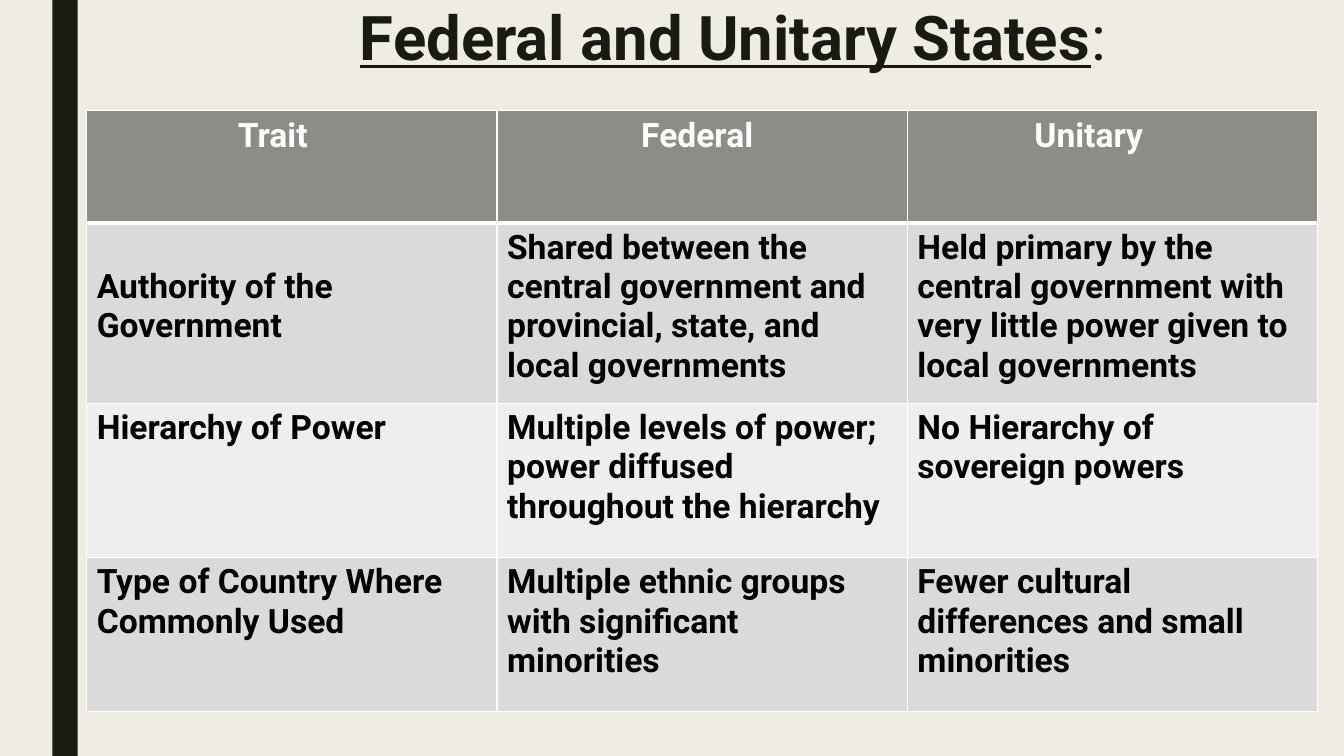
import pptx
import pptx.dml.color
import pptx.enum.shapes
import pptx.enum.text
import pptx.oxml
import pptx.oxml.ns
import pptx.util

COLORS = {
    "paper": "EFEDE3",
    "ink": "191B0E",
    "header": "8C8D86",
    "odd": "DADBD9",
    "even": "EEEEED",
    "white": "FFFFFF",
    "black": "000000",
}
TITLE = [
    ("Federal and Unitary States", {"bold": True, "underline": True}),
    (":", {"bold": False, "underline": False}),
]
ROWS = [
    ("Trait", "Federal", "Unitary"),
    (
        "Authority of the Government",
        "Shared between the central government and provincial, state, and local governments",
        "Held primary by the central government with very little power given to local governments",
    ),
    (
        "Hierarchy of Power",
        "Multiple levels of power; power diffused throughout the hierarchy",
        "No Hierarchy of sovereign powers",
    ),
    (
        "Type of Country Where Commonly Used",
        "Multiple ethnic groups with significant minorities",
        "Fewer cultural differences and small minorities",
    ),
]
ROW_HEIGHTS = [1.11, 1.79, 1.53, 1.53]
COLUMN_WIDTH = 4.07
HEADER_INDENTS = [1.5, 1.43, 1.26]
LOWERED_CELL = (1, 0)
LOWERED_MARGIN = 0.44

inch = pptx.util.Inches


def color(name):
    return pptx.dml.color.RGBColor.from_string(COLORS[name])


def paint(target, name):
    target.fill.solid()
    target.fill.fore_color.rgb = color(name)


def add_text(para, text, ink, formats):
    span = para.add_run()
    span.text = text
    span.font.name = "Roboto"
    span.font.color.rgb = color(ink)
    for key, value in formats.items():
        setattr(span.font, key, value)


def add_borders(cell, bottom):
    properties = cell._tc.get_or_add_tcPr()
    widths = {"lnL": 1, "lnR": 1, "lnT": 1, "lnB": bottom}
    for position, (side, width) in enumerate(widths.items()):
        line = pptx.oxml.parse_xml(
            f'<a:{side} {pptx.oxml.ns.nsdecls("a")} w="{pptx.util.Pt(width)}">'
            f'<a:solidFill><a:srgbClr val="{COLORS["white"]}"/></a:solidFill></a:{side}>'
        )
        properties.insert(position, line)


def add_title(page):
    box = page.shapes.add_textbox(inch(1.5), 0, inch(10.5), inch(1.1))
    frame = box.text_frame
    settings = {
        "word_wrap": True,
        "vertical_anchor": pptx.enum.text.MSO_ANCHOR.TOP,
        "margin_left": inch(2.07),
        "margin_top": inch(0.08),
    }
    for key, value in settings.items():
        setattr(frame, key, value)
    para = frame.paragraphs[0]
    para.line_spacing = 0.89
    for text, formats in TITLE:
        add_text(para, text, "ink", {"size": pptx.util.Pt(44), **formats})


def add_traits(page):
    columns = len(ROWS[0])
    table = page.shapes.add_table(
        len(ROWS), columns, inch(0.86), inch(1.1),
        inch(COLUMN_WIDTH * columns), inch(sum(ROW_HEIGHTS)),
    ).table
    for column in table.columns:
        column.width = inch(COLUMN_WIDTH)
    for r, texts in enumerate(ROWS):
        table.rows[r].height = inch(ROW_HEIGHTS[r])
        header = r == 0
        fill = "header" if header else ("odd" if r % 2 else "even")
        for c, text in enumerate(texts):
            cell = table.cell(r, c)
            paint(cell, fill)
            add_borders(cell, 3 if header else 1)
            if header:
                cell.margin_left = inch(HEADER_INDENTS[c])
            if (r, c) == LOWERED_CELL:
                cell.margin_top = inch(LOWERED_MARGIN)
            add_text(
                cell.text_frame.paragraphs[0], text, "white" if header else "black",
                {"size": pptx.util.Pt(24), "bold": True},
            )


def main():
    deck = pptx.Presentation()
    deck.slide_width, deck.slide_height = inch(13.33), inch(7.5)
    page = deck.slides.add_slide(deck.slide_layouts[6])
    paint(page.background, "paper")
    stripe = page.shapes.add_shape(
        pptx.enum.shapes.MSO_SHAPE.RECTANGLE, inch(0.52), 0, inch(0.25), deck.slide_height
    )
    stripe.shadow.inherit = False
    paint(stripe, "ink")
    stripe.line.fill.background()
    add_title(page)
    add_traits(page)
    deck.save("out.pptx")


if __name__ == "__main__":
    main()
